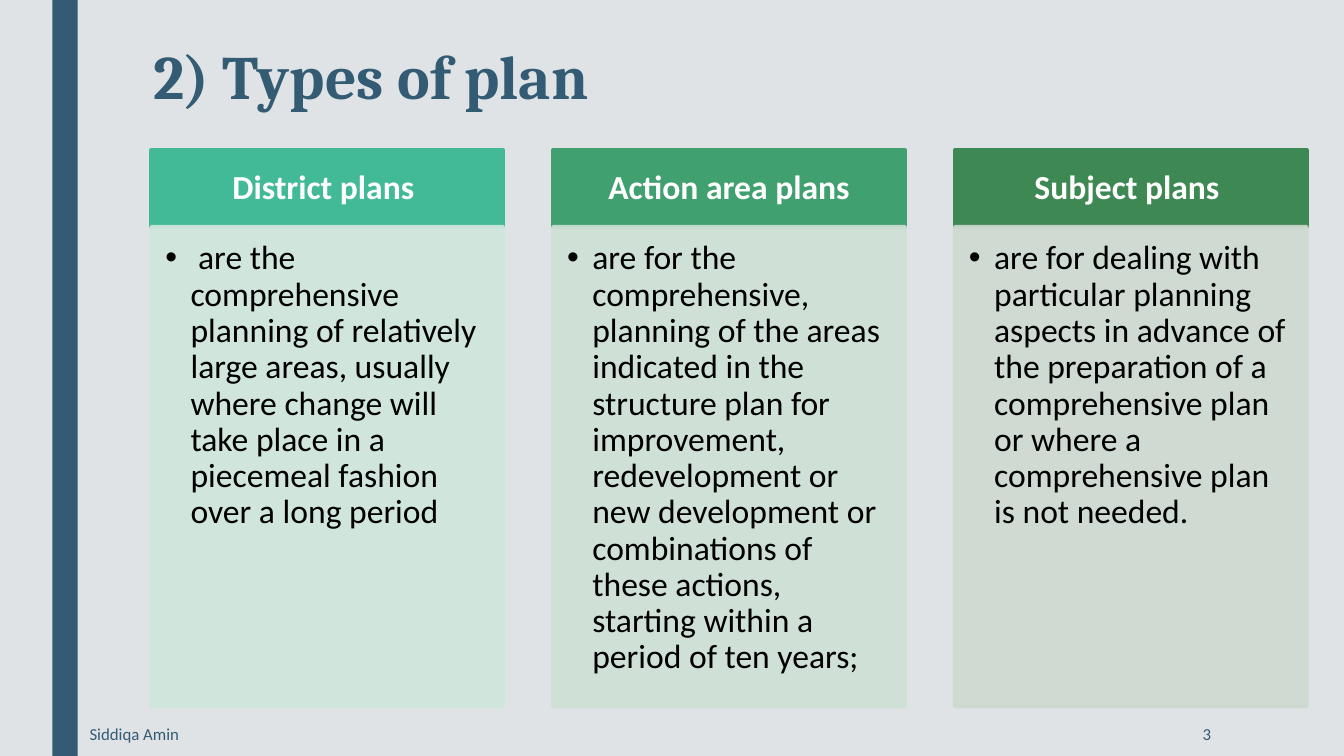
from dataclasses import dataclass

from lxml.etree import SubElement
from pptx import Presentation
from pptx.dml.color import RGBColor
from pptx.enum.shapes import MSO_SHAPE
from pptx.enum.text import MSO_ANCHOR, PP_ALIGN
from pptx.oxml.ns import qn
from pptx.util import Inches, Pt


@dataclass(frozen=True)
class Theme:
    back: str = "DFE3E5"
    navy: str = "335B74"
    white: str = "FFFFFF"
    black: str = "000000"
    serif: str = "Cambria"
    sans: str = "Calibri"
    title: int = 44
    body: int = 24
    small: int = 12


def write(frame, text, *, size, color, font, bold=False, align=PP_ALIGN.LEFT,
          anchor=MSO_ANCHOR.TOP, inset=(0.1, 0.05, 0.1, 0.05), space=1.0, bullet=None):
    frame.word_wrap = True
    frame.vertical_anchor = anchor
    (frame.margin_left, frame.margin_top,
     frame.margin_right, frame.margin_bottom) = map(Inches, inset)
    para = frame.paragraphs[0]
    para.text = text
    para.alignment = align
    para.line_spacing = space
    if bullet:
        props = para._p.get_or_add_pPr()
        props.set("marL", str(Inches(0.25)))
        props.set("indent", str(Inches(-0.25)))
        SubElement(props, qn("a:buFont")).set("typeface", "Arial")
        SubElement(props, qn("a:buChar")).set("char", bullet)
    style = para.runs[0].font
    style.name = font
    style.size = Pt(size)
    style.bold = bold
    style.color.rgb = RGBColor.from_string(color)


class Deck:
    def __init__(self, theme):
        self.theme = theme
        self.file = Presentation()
        self.file.slide_width = Inches(13.33)
        self.file.slide_height = Inches(7.5)
        self.slide = self.file.slides.add_slide(self.file.slide_layouts[6])
        fill = self.slide.background.fill
        fill.solid()
        fill.fore_color.rgb = RGBColor.from_string(theme.back)

    def rect(self, box, color, edge=0, alpha=100):
        shape = self.slide.shapes.add_shape(MSO_SHAPE.RECTANGLE, *map(Inches, box))
        shape.shadow.inherit = False
        shape.fill.solid()
        shape.fill.fore_color.rgb = RGBColor.from_string(color)
        if edge:
            shape.line.width = Pt(edge)
            shape.line.color.rgb = RGBColor.from_string(color)
        else:
            shape.line.fill.background()
        if alpha < 100:
            for node in shape._element.spPr.iter(qn("a:srgbClr")):
                SubElement(node, qn("a:alpha")).set("val", str(alpha * 1000))
        return shape

    def label(self, box, text, **form):
        shape = self.slide.shapes.add_textbox(*map(Inches, box))
        write(shape.text_frame, text, **form)

    def card(self, left, head, body, dark, light):
        theme = self.theme
        width, top, split, end = 3.49, 1.49, 2.25, 7.01
        shape = self.rect((left, top, width, split - top), dark, edge=2.75)
        write(shape.text_frame, head, size=theme.body, color=theme.white,
              font=theme.sans, bold=True, align=PP_ALIGN.CENTER,
              anchor=MSO_ANCHOR.MIDDLE, inset=(0.19, 0.11, 0.19, 0.11), space=0.9)
        shape = self.rect((left, split, width, end - split), light, edge=2.75, alpha=90)
        write(shape.text_frame, body, size=theme.body, color=theme.black,
              font=theme.sans, inset=(0.14, 0.14, 0.19, 0.21), space=0.9, bullet="•")


PLANS = [
    ("District plans ",
     " are the comprehensive planning of relatively large areas, usually where "
     "change will take place in a piecemeal fashion over a long period",
     "42BA97", "CFE7DD"),
    ("Action area plans",
     "are for the comprehensive, planning of the areas indicated in the structure "
     "plan for improvement, redevelopment or new development or combinations of "
     "these actions, starting within a period of ten years;",
     "41A070", "CEE0D5"),
    ("Subject plans ",
     "are for dealing with particular planning aspects in advance of the "
     "preparation of a comprehensive plan or where a comprehensive plan is not needed.",
     "3E8853", "CEDAD1"),
]


def main():
    theme = Theme()
    deck = Deck(theme)
    deck.rect((0.52, 0, 0.25, 7.5), theme.navy)
    deck.label((1.42, 0.42, 10.5, 1.62), "2) Types of plan", size=theme.title,
               color=theme.navy, font=theme.serif, bold=True, space=0.89)
    for index, plan in enumerate(PLANS):
        deck.card(1.5 + index * 3.985, *plan)
    small = dict(size=theme.small, color=theme.navy, font=theme.sans,
                 anchor=MSO_ANCHOR.MIDDLE)
    deck.label((10.36, 7.06, 1.75, 0.44), "3", align=PP_ALIGN.RIGHT, **small)
    deck.label((0.79, 7.06, 6.87, 0.44), "Siddiqa Amin", **small)
    deck.file.save("out.pptx")


if __name__ == "__main__":
    main()
